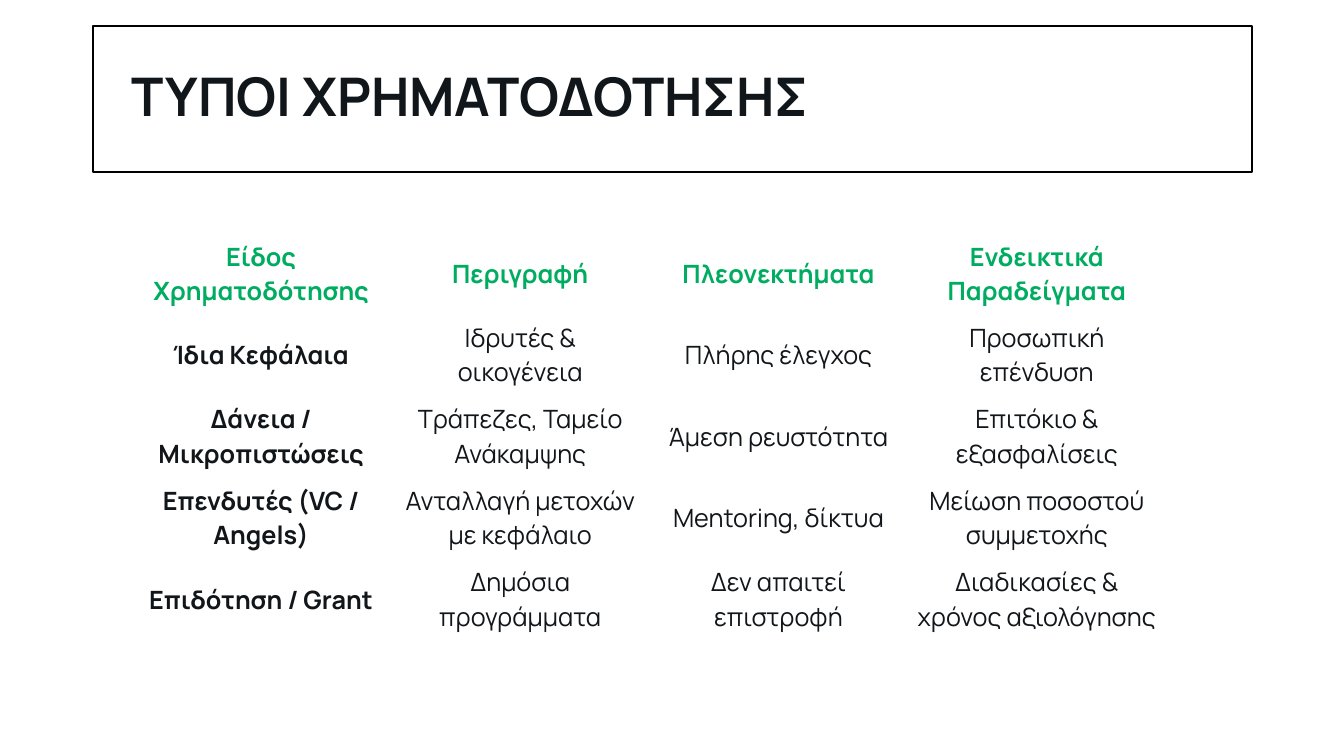
from dataclasses import dataclass

from pptx import Presentation
from pptx import util as u
from pptx.dml.color import RGBColor
from pptx.enum import text

FONT = "Manrope"
INK = RGBColor(0x11, 0x16, 0x1A)
GREEN = RGBColor(0x00, 0xAC, 0x60)
BLACK = RGBColor(0x00, 0x00, 0x00)

COLUMN_WIDTHS = (185.8, 184.5, 184.5, 184.5)
ROW_HEIGHT = 58.2
CELL_SIDE_MARGIN = 6.8


@dataclass(frozen=True)
class FundingRow:
    kind: str
    description: str
    advantage: str
    example: str

    def texts(self) -> tuple[str, ...]:
        return self.kind, self.description, self.advantage, self.example


HEADER = FundingRow("Είδος Χρηματοδότησης", "Περιγραφή",
                    "Πλεονεκτήματα", "Ενδεικτικά Παραδείγματα")
FUNDING_TYPES = (
    FundingRow("Ίδια Κεφάλαια", "Ιδρυτές & οικογένεια",
               "Πλήρης έλεγχος", "Προσωπική επένδυση"),
    FundingRow("Δάνεια / Μικροπιστώσεις", "Τράπεζες, Ταμείο Ανάκαμψης",
               "Άμεση ρευστότητα", "Επιτόκιο & εξασφαλίσεις"),
    FundingRow("Επενδυτές (VC / Angels)", "Ανταλλαγή μετοχών με κεφάλαιο",
               "Mentoring, δίκτυα", "Μείωση ποσοστού συμμετοχής"),
    FundingRow("Επιδότηση / Grant", "Δημόσια προγράμματα",
               "Δεν απαιτεί επιστροφή", "Διαδικασίες & χρόνος αξιολόγησης"),
)


def write_text(frame, content: str, *, size: float, color: RGBColor = INK,
               bold: bool = False, align=text.PP_ALIGN.LEFT,
               line_spacing: float = 1.0, left: float = 0, indent: float = 0) -> None:
    """Fill a text frame with one formatted paragraph."""
    paragraph = frame.paragraphs[0]
    paragraph.alignment = align
    paragraph.line_spacing = line_spacing
    paragraph.space_before = u.Pt(0)
    properties = paragraph._p.get_or_add_pPr()
    properties.set("marL", str(u.Pt(left)))
    properties.set("indent", str(u.Pt(indent)))
    run = paragraph.add_run()
    run.text = content
    run.font.name = FONT
    run.font.size = u.Pt(size)
    run.font.bold = bold
    run.font.color.rgb = color


def add_title(slide) -> None:
    title = slide.shapes.title
    title.left, title.top = u.Pt(66.2), u.Pt(18.7)
    title.width, title.height = u.Pt(828), u.Pt(104.4)
    title.line.color.rgb = BLACK
    title.line.width = u.Pt(1.5)
    frame = title.text_frame
    frame.word_wrap = True
    frame.auto_size = text.MSO_AUTO_SIZE.NONE
    frame.vertical_anchor = text.MSO_ANCHOR.MIDDLE
    write_text(frame, "ΤΥΠΟΙ ΧΡΗΜΑΤΟΔΟΤΗΣΗΣ", size=38, bold=True,
               line_spacing=0.9, left=13.7, indent=7.2)


def add_funding_table(slide) -> None:
    rows = (HEADER, *FUNDING_TYPES)
    table = slide.shapes.add_table(
        len(rows), len(COLUMN_WIDTHS), u.Pt(93.6), u.Pt(166.3),
        u.Pt(sum(COLUMN_WIDTHS)), u.Pt(ROW_HEIGHT * len(rows))).table
    table.first_row = False
    table.horz_banding = False
    for column, width in zip(table.columns, COLUMN_WIDTHS):
        column.width = u.Pt(width)
    for row_index, row in enumerate(rows):
        table.rows[row_index].height = u.Pt(ROW_HEIGHT)
        is_header = row is HEADER
        for column_index, content in enumerate(row.texts()):
            cell = table.cell(row_index, column_index)
            cell.fill.background()
            cell.vertical_anchor = text.MSO_ANCHOR.MIDDLE
            cell.margin_left = cell.margin_right = u.Pt(CELL_SIDE_MARGIN)
            write_text(cell.text_frame, content, size=18,
                       color=GREEN if is_header else INK,
                       bold=is_header or column_index == 0,
                       align=text.PP_ALIGN.CENTER)


def main() -> None:
    presentation = Presentation()
    presentation.slide_width = u.Pt(960)
    presentation.slide_height = u.Pt(540)
    # Title Only layout
    slide = presentation.slides.add_slide(presentation.slide_layouts[5])
    # Framed heading
    add_title(slide)
    # Funding types
    add_funding_table(slide)
    presentation.save("out.pptx")


if __name__ == "__main__":
    main()
